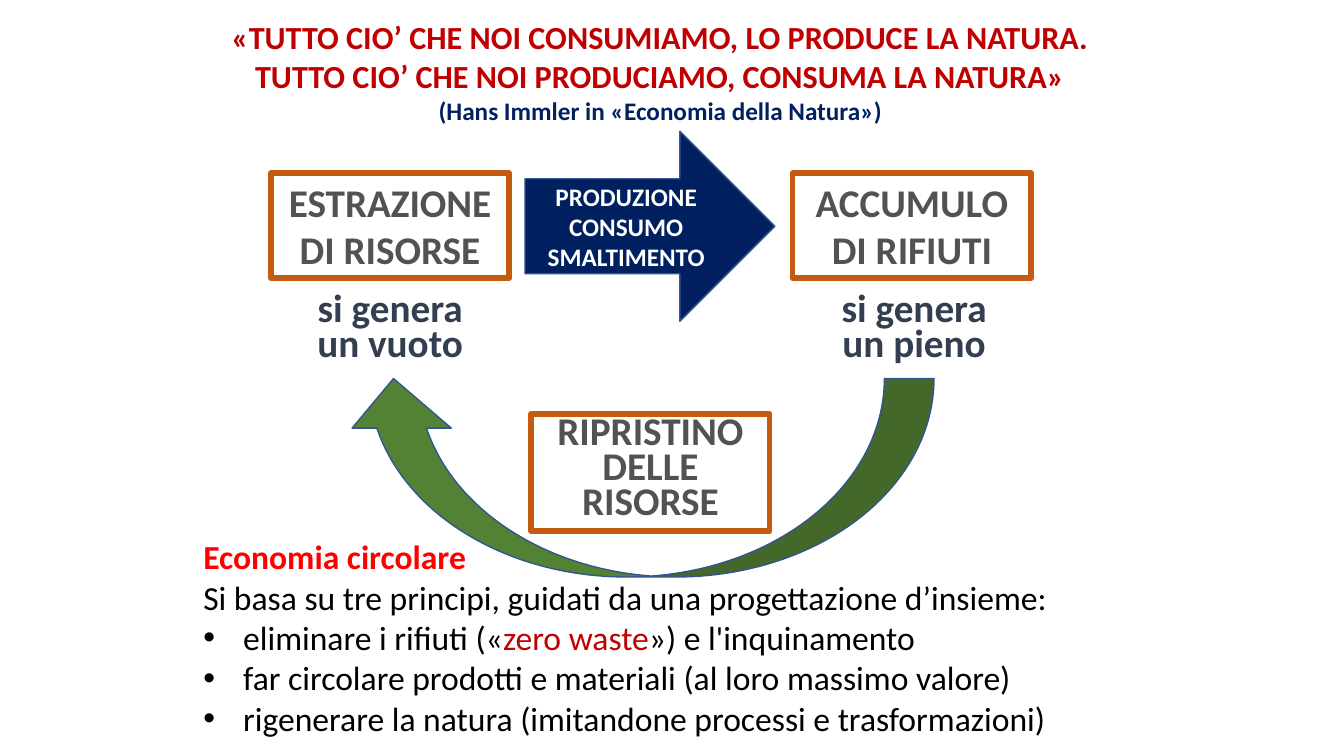
from lxml import etree
from pptx import Presentation
from pptx.dml.color import RGBColor
from pptx.enum.shapes import MSO_SHAPE
from pptx.enum.text import MSO_ANCHOR, MSO_AUTO_SIZE, PP_ALIGN
from pptx.oxml.ns import qn
from pptx.util import Pt

PX = 9525
RECTANGLE = MSO_SHAPE.RECTANGLE
RIGHT_ARROW = MSO_SHAPE.RIGHT_ARROW
CURVED_ARROW = MSO_SHAPE.CURVED_LEFT_ARROW
TOP, MIDDLE = MSO_ANCHOR.TOP, MSO_ANCHOR.MIDDLE
CENTER, LEFT = PP_ALIGN.CENTER, PP_ALIGN.LEFT
NO_AUTOFIT = MSO_AUTO_SIZE.NONE

NAVY, RED, GREY = "002060", "C00000", "525252"
ORANGE, GREEN, BLUE_EDGE = "C55A11", "548235", "325491"


def color(hex_string):
    return RGBColor.from_string(hex_string)


def write(text_frame, lines, anchor=TOP, align=CENTER, line_spacing=None):
    """Fill a frame; each line is a list of (text, size, hex colour, bold) runs."""
    text_frame.auto_size = NO_AUTOFIT
    text_frame.vertical_anchor = anchor
    for index, runs in enumerate(lines):
        paragraph = text_frame.paragraphs[0] if index == 0 else text_frame.add_paragraph()
        paragraph.alignment = align
        paragraph.space_before = Pt(0)
        if line_spacing:
            paragraph.line_spacing = line_spacing
        for text, size, hex_string, bold in runs:
            run = paragraph.add_run()
            run.text = text
            run.font.name = "Calibri"
            run.font.size = Pt(size)
            run.font.bold = bold
            run.font.color.rgb = color(hex_string)


presentation = Presentation()
presentation.slide_width = 1280 * PX
presentation.slide_height = 720 * PX
slide = presentation.slides.add_slide(presentation.slide_layouts[1])
shapes = slide.shapes

# Quotation
title = shapes.title
title.left, title.top, title.width, title.height = [n * PX for n in (202, 12, 854, 113)]
title.text_frame.word_wrap = True
write(title.text_frame, [
    [("«TUTTO CIO’ CHE NOI CONSUMIAMO, LO PRODUCE LA NATURA.", 23, RED, True)],
    [("TUTTO CIO’ CHE NOI PRODUCIAMO, CONSUMA LA NATURA»", 23, RED, True)],
    [("(Hans Immler in «Economia della Natura»)", 18, NAVY, True)],
])

# Circular economy principles
body = slide.placeholders[1]
body.left, body.top, body.width, body.height = [n * PX for n in (146, 506, 888, 204)]
body.text_frame.word_wrap = True
write(body.text_frame, [
    [("Economia circolare", 24, "FF0000", True)],
    [("Si basa su tre principi, guidati da una progettazione d’insieme:", 24, "000000", False)],
    [("eliminare i rifiuti («", 24, "000000", False),
     ("zero waste", 24, RED, False),
     ("») e l'inquinamento", 24, "000000", False)],
    [("far circolare prodotti e materiali (al loro massimo valore)", 24, "000000", False)],
    [("rigenerare la natura (imitandone processi e trasformazioni)", 24, "000000", False)],
], align=LEFT)
for index, paragraph in enumerate(body.text_frame.paragraphs):
    bulleted = index >= 2
    properties = paragraph._p.get_or_add_pPr()
    properties.set("marL", str((76 if bulleted else 38) * PX))
    properties.set("indent", str((-38 if bulleted else 0) * PX))
    if bulleted:
        etree.SubElement(properties, qn("a:buFont")).set("typeface", "Arial")
        etree.SubElement(properties, qn("a:buChar")).set("char", "•")
    else:
        etree.SubElement(properties, qn("a:buNone"))

# Arrows
arrows = [
    (RIGHT_ARROW, (500, 125, 238, 181), 0, NAVY, ["PRODUZIONE", "CONSUMO", "SMALTIMENTO"]),
    (CURVED_ARROW, (514, 174, 189, 562), 90, GREEN, []),
]
for kind, box, rotation, fill, labels in arrows:
    arrow = shapes.add_shape(kind, *[n * PX for n in box])
    arrow.rotation = rotation
    arrow.shadow.inherit = False
    arrow.fill.solid()
    arrow.fill.fore_color.rgb = color(fill)
    arrow.line.color.rgb = color(BLUE_EDGE)
    arrow.line.width = Pt(1)
    write(arrow.text_frame, [[(label, 18, "FFFFFF", True)] for label in labels], MIDDLE)

# Framed stages
stages = [
    ("ESTRAZIONE DI RISORSE", 258, 165, 100, None),
    ("ACCUMULO DI RIFIUTI", 755, 165, 100, None),
    ("RIPRISTINO DELLE RISORSE", 506, 394, 112, Pt(25)),
]
for text, left, top, height, line_spacing in stages:
    stage = shapes.add_shape(RECTANGLE, left * PX, top * PX, 227 * PX, height * PX)
    stage.shadow.inherit = False
    stage.fill.background()
    stage.line.color.rgb = color(ORANGE)
    stage.line.width = Pt(4)
    write(stage.text_frame, [[(text, 28, GREY, True)]], line_spacing=line_spacing)

# Effects below the two upper stages
for left, effect in ((292, "un vuoto"), (791, "un pieno")):
    caption = shapes.add_textbox(left * PX, 277 * PX, 159 * PX, 79 * PX)
    caption.text_frame.word_wrap = False
    write(caption.text_frame,
          [[(text, 28, "333F50", True)] for text in ("si genera", effect)],
          line_spacing=Pt(25))

presentation.save("out.pptx")
